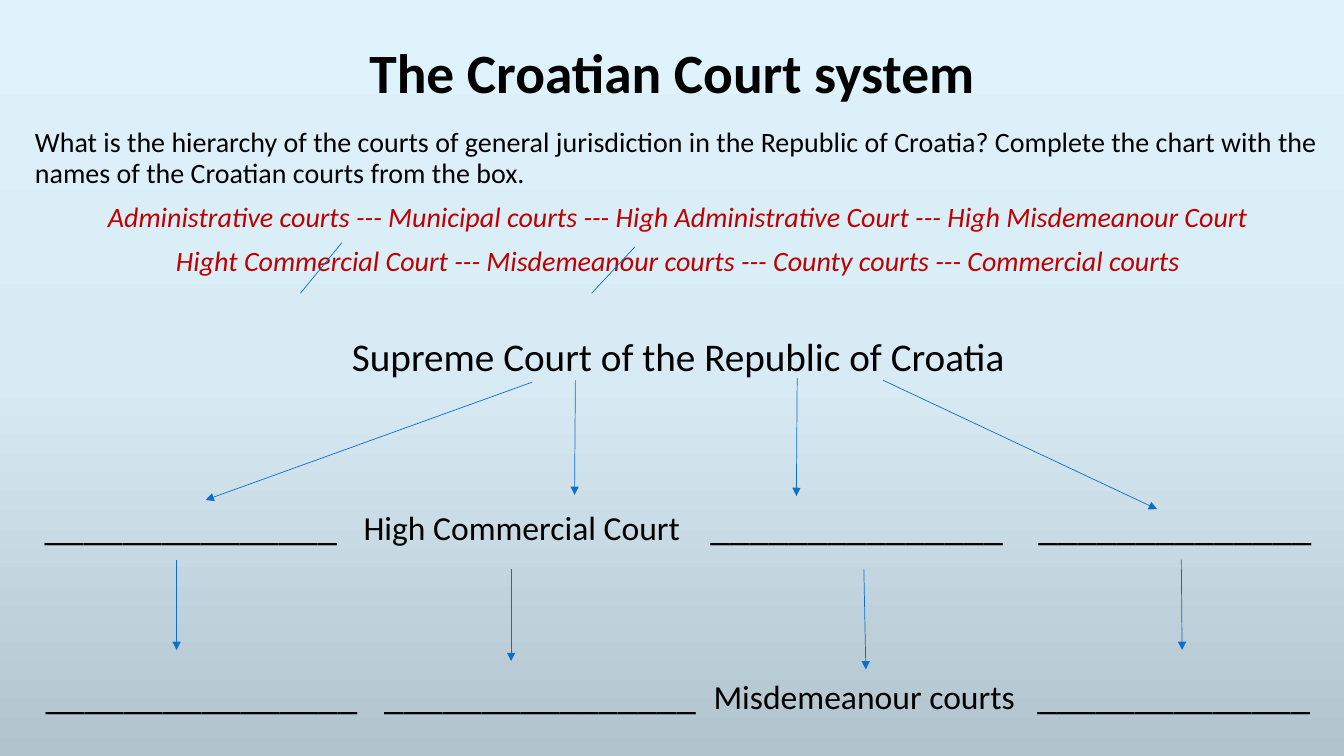
from copy import deepcopy

from lxml.etree import SubElement
from pptx import Presentation
from pptx.dml.color import RGBColor
from pptx.enum.shapes import MSO_CONNECTOR
from pptx.enum.text import MSO_ANCHOR, PP_ALIGN
from pptx.oxml.ns import qn
from pptx.util import Cm, Pt

FONT, BLACK, RED, BLUE = "Calibri", "000000", "C00000", "0F6FC6"
WIDE, HIGH = 33.87, 19.05
SHADES = [(0, "DFF3FD"), (0.5, "D8EBF5"), (1, "B1C4CE")]

TITLE = "The Croatian Court system"
TASK = ("What is the hierarchy of the courts of general jurisdiction in the "
        "Republic of Croatia? Complete the chart with the names of the "
        "Croatian courts from the box.")
WORDS = [
    "Administrative courts --- Municipal courts --- High Administrative Court"
    " --- High Misdemeanour Court",
    "Hight Commercial Court --- Misdemeanour courts --- County courts"
    " --- Commercial courts",
]

# Each level of the chart: (text, centre in cm, size in points)
LEVELS = [
    [("Supreme Court of the Republic of Croatia", 17.09, 28)],
    [("_" * 15, 4.81, 28), ("High Commercial Court", 13.15, 24),
     ("_" * 15, 21.59, 28), ("_" * 14, 29.61, 28)],
    [("_" * 16, 5.08, 28), ("_" * 16, 13.61, 28),
     ("Misdemeanour courts", 21.78, 24), ("_" * 14, 29.58, 28)],
]
BASE, PITCH = 9.32, 4.26  # first baseline and step between levels, in cm
ASCENT = 0.952 * 2.54 / 72  # cm from line top to baseline, per point

# Lines in cm: x and y of the start, x and y of the end
ARROWS = [
    (13.41, 9.63, 5.18, 12.6), (14.5, 9.58, 14.48, 12.47),
    (20.09, 9.53, 20.07, 12.5), (22.25, 9.58, 29.16, 12.83),
    (4.45, 14.1, 4.45, 16.38), (12.88, 14.33, 12.88, 16.66),
    (21.77, 14.33, 21.82, 16.87), (29.77, 14.1, 29.79, 16.38),
]
STRIKES = [(7.57, 7.39, 8.61, 6.12), (16, 6.22, 14.91, 7.39)]


def shade(slide, stops):
    """Fill the background from top to bottom."""
    fill = slide.background.fill
    fill.gradient()
    fill.gradient_angle = 270
    first = slide.element.find(".//" + qn("a:gs"))
    first.addnext(deepcopy(first))
    for stop, (place, tone) in zip(fill.gradient_stops, stops):
        stop.position = place
        stop.color.rgb = RGBColor.from_string(tone)


def add_box(slide, left, top, width, height, pad=0):
    box = slide.shapes.add_textbox(Cm(left), Cm(top), Cm(width), Cm(height))
    frame = box.text_frame
    frame.word_wrap = True
    frame.margin_left = frame.margin_right = Cm(pad)
    frame.margin_top = frame.margin_bottom = Cm(pad / 2)
    return frame


def style(para, size, tone=BLACK, bold=False, slant=False,
          align=PP_ALIGN.CENTER):
    para.alignment = align
    for run in para.runs:
        font = run.font
        font.name, font.size = FONT, Pt(size)
        font.bold, font.italic = bold, slant
        font.color.rgb = RGBColor.from_string(tone)


def add_line(slide, ends, arrow):
    line = slide.shapes.add_connector(
        MSO_CONNECTOR.STRAIGHT, *[Cm(n) for n in ends])
    line.line.color.rgb = RGBColor.from_string(BLUE)
    line.line.width = Pt(0.5)
    if arrow:
        SubElement(line.line._get_or_add_ln(), qn("a:tailEnd"),
                   type="triangle")
    SubElement(line.element.spPr, qn("a:effectLst"))


def main():
    deck = Presentation()
    deck.slide_width, deck.slide_height = Cm(WIDE), Cm(HIGH)
    slide = deck.slides.add_slide(deck.slide_layouts[6])
    shade(slide, SHADES)

    head = add_box(slide, 2.33, 1.02, 29.21, 1.78, pad=0.25)
    head.vertical_anchor = MSO_ANCHOR.MIDDLE
    head.text = TITLE
    head.paragraphs[0].line_spacing = 0.9
    style(head.paragraphs[0], 39.6, bold=True)

    body = add_box(slide, 0.63, 3.12, 32.92, 4.2, pad=0.25)
    body.text = "\n".join([TASK] + WORDS)
    task, *words = body.paragraphs
    style(task, 20, align=PP_ALIGN.LEFT)
    for para in words:
        para.space_before = Pt(10)
        style(para, 20, RED, slant=True)
    for para in body.paragraphs:
        para.line_spacing = 0.9

    for step, level in enumerate(LEVELS):
        width = 18 if len(level) == 1 else 8.4
        for text, mid, size in level:
            top = BASE + step * PITCH - size * ASCENT
            frame = add_box(slide, mid - width / 2, top, width, 1.2)
            frame.text = text
            style(frame.paragraphs[0], size)

    for ends in ARROWS:
        add_line(slide, ends, True)
    for ends in STRIKES:
        add_line(slide, ends, False)
    deck.save("out.pptx")


if __name__ == "__main__":
    main()
